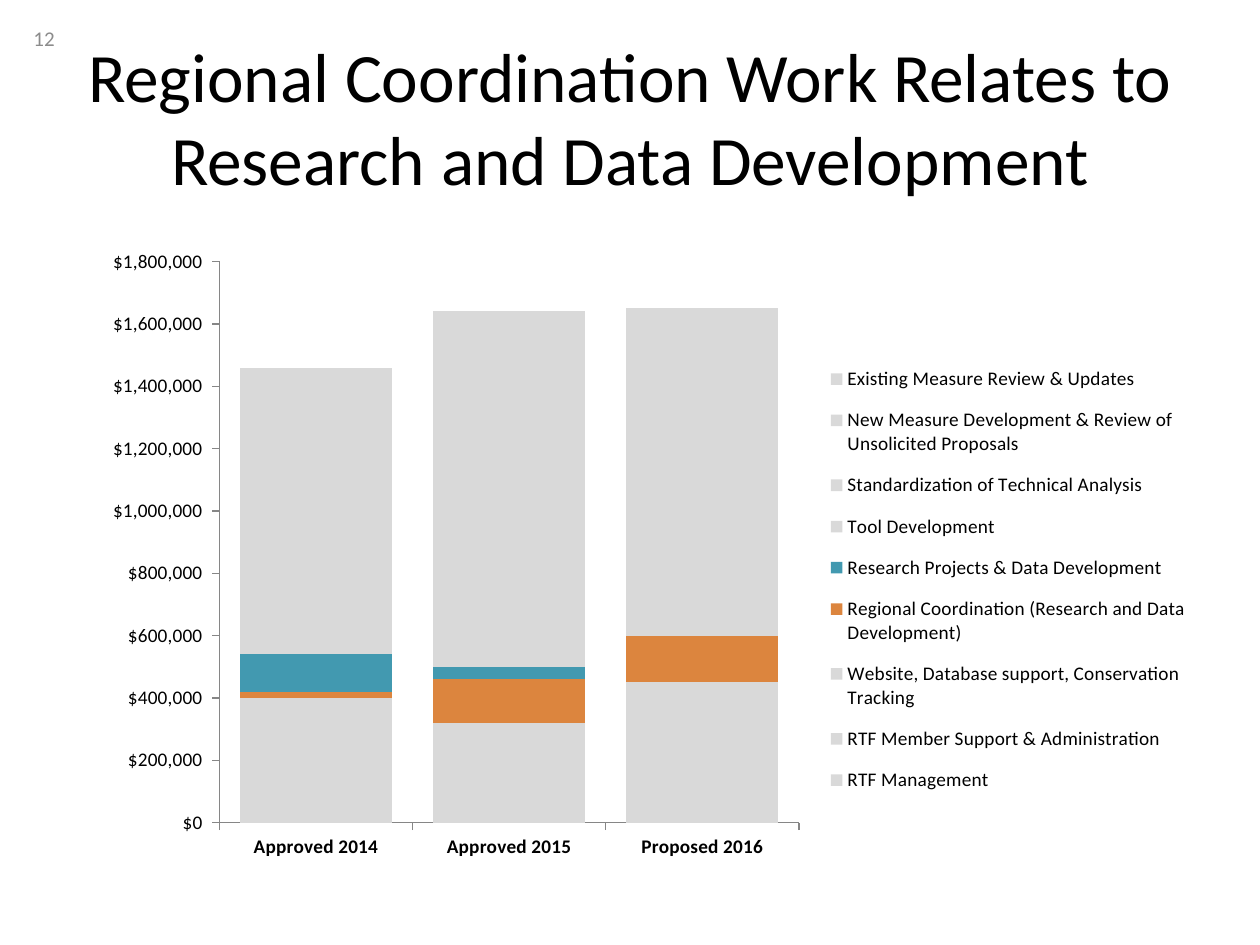
"""Build a slide with a stacked column chart of work budgets by year."""
from lxml import etree
from pptx import Presentation
from pptx.chart.data import CategoryChartData
from pptx.dml.color import RGBColor
from pptx.enum.chart import XL_CHART_TYPE, XL_LEGEND_POSITION, XL_TICK_MARK
from pptx.enum.text import MSO_ANCHOR, PP_ALIGN
from pptx.oxml.ns import qn
from pptx.util import Emu, Pt

STACKED = XL_CHART_TYPE.COLUMN_STACKED
RIGHT = XL_LEGEND_POSITION.RIGHT
OUT, NONE = XL_TICK_MARK.OUTSIDE, XL_TICK_MARK.NONE
MIDDLE = MSO_ANCHOR.MIDDLE
LEFT, CENTER = PP_ALIGN.LEFT, PP_ALIGN.CENTER

FONT = "Calibri"
COLORS = {
    "text": "000000",
    "number": "8C8C8C",
    "axis": "868686",
    "muted": "D9D9D9",
    "region": "DC853E",
    "research": "4299B0",
}
TITLE = "Regional Coordination Work Relates to Research and Data Development"
NUMBER = "12"
YEARS = ["Approved 2014", "Approved 2015", "Proposed 2016"]
SERIES = [
    ("RTF Management", (200000, 130000, 140000), "muted"),
    ("RTF Member Support & Administration", (140000, 150000, 230000), "muted"),
    ("Website, Database support, Conservation Tracking", (60000, 40000, 80000), "muted"),
    ("Regional Coordination (Research and Data Development)", (20000, 140000, 150000), "region"),
    ("Research Projects & Data Development", (120000, 40000, 0), "research"),
    ("Tool Development", (180000, 90000, 70000), "muted"),
    ("Standardization of Technical Analysis", (60000, 110000, 200000), "muted"),
    ("New Measure Development & Review of Unsolicited Proposals", (200000, 400000, 330000), "muted"),
    ("Existing Measure Review & Updates", (480000, 540000, 450000), "muted"),
]
MONEY = '"$"#,##0_);\\("$"#,##0\\)'

SIZE = (1260, 945)
BOXES = {
    "title": (63, 38, 1134, 157),
    "number": (21, 13, 294, 50),
    "chart": (63, 220, 1134, 672),
    "plot": (219, 262, 579, 561),
    "legend": (828, 350, 360, 460),
}


def px(n):
    return Emu(round(n * 914400 / 126))


def place(name):
    return [px(n) for n in BOXES[name]]


def color(name):
    return RGBColor.from_string(COLORS[name])


def style(font, size, name="text", bold=False):
    font.name, font.size, font.bold = FONT, Pt(size), bold
    font.color.rgb = color(name)


def write(shape, text, size, name, align):
    frame = shape.text_frame
    frame.word_wrap = True
    frame.vertical_anchor = MIDDLE
    para = frame.paragraphs[0]
    para.alignment = align
    run = para.add_run()
    run.text = text
    style(run.font, size, name)


def arrange(parent, spot, name, inner=False):
    for old in parent.findall(qn("c:layout")):
        parent.remove(old)
    layout = etree.Element(qn("c:layout"))
    manual = etree.SubElement(layout, qn("c:manualLayout"))
    left, top, wide, high = BOXES["chart"]
    x, y, w, h = BOXES[name]
    items = [("layoutTarget", "inner")] if inner else []
    items += [("xMode", "edge"), ("yMode", "edge")]
    items += [("x", (x - left) / wide), ("y", (y - top) / high)]
    items += [("w", w / wide), ("h", h / high)]
    for tag, value in items:
        text = value if isinstance(value, str) else f"{value:.3f}"
        etree.SubElement(manual, qn(f"c:{tag}"), val=text)
    parent.insert(spot, layout)


def add_chart(slide):
    data = CategoryChartData(number_format=MONEY)
    data.categories = YEARS
    for name, values, _ in SERIES:
        data.add_series(name, values)
    chart = slide.shapes.add_chart(STACKED, *place("chart"), data).chart
    style(chart.font, 10)
    chart.has_title = False

    plot = chart.plots[0]
    plot.gap_width, plot.overlap = 27, 100
    plot.vary_by_categories = False
    for series, (_, _, shade) in zip(plot.series, SERIES):
        series.format.fill.solid()
        series.format.fill.fore_color.rgb = color(shade)

    for axis, bold in ((chart.category_axis, True), (chart.value_axis, False)):
        axis.has_major_gridlines = False
        axis.major_tick_mark, axis.minor_tick_mark = OUT, NONE
        axis.format.line.color.rgb = color("axis")
        style(axis.tick_labels.font, 11, bold=bold)
    axis = chart.value_axis
    axis.minimum_scale, axis.maximum_scale, axis.major_unit = 0, 1800000, 200000
    axis.tick_labels.number_format = MONEY
    axis.tick_labels.number_format_is_linked = False

    chart.has_legend = True
    legend = chart.legend
    legend.position, legend.include_in_layout = RIGHT, False
    style(legend.font, 11)
    area = chart._chartSpace.find(".//" + qn("c:plotArea"))
    arrange(area, 0, "plot", inner=True)
    arrange(legend._element, 1, "legend")


def main():
    deck = Presentation()
    deck.slide_width, deck.slide_height = map(px, SIZE)
    slide = deck.slides.add_slide(deck.slide_layouts[5])
    title = slide.shapes.title
    title.left, title.top, title.width, title.height = place("title")
    write(title, TITLE, 39.6, "text", CENTER)
    box = slide.shapes.add_textbox(*place("number"))
    write(box, NUMBER, 12, "number", LEFT)
    add_chart(slide)
    deck.save("out.pptx")


if __name__ == "__main__":
    main()
